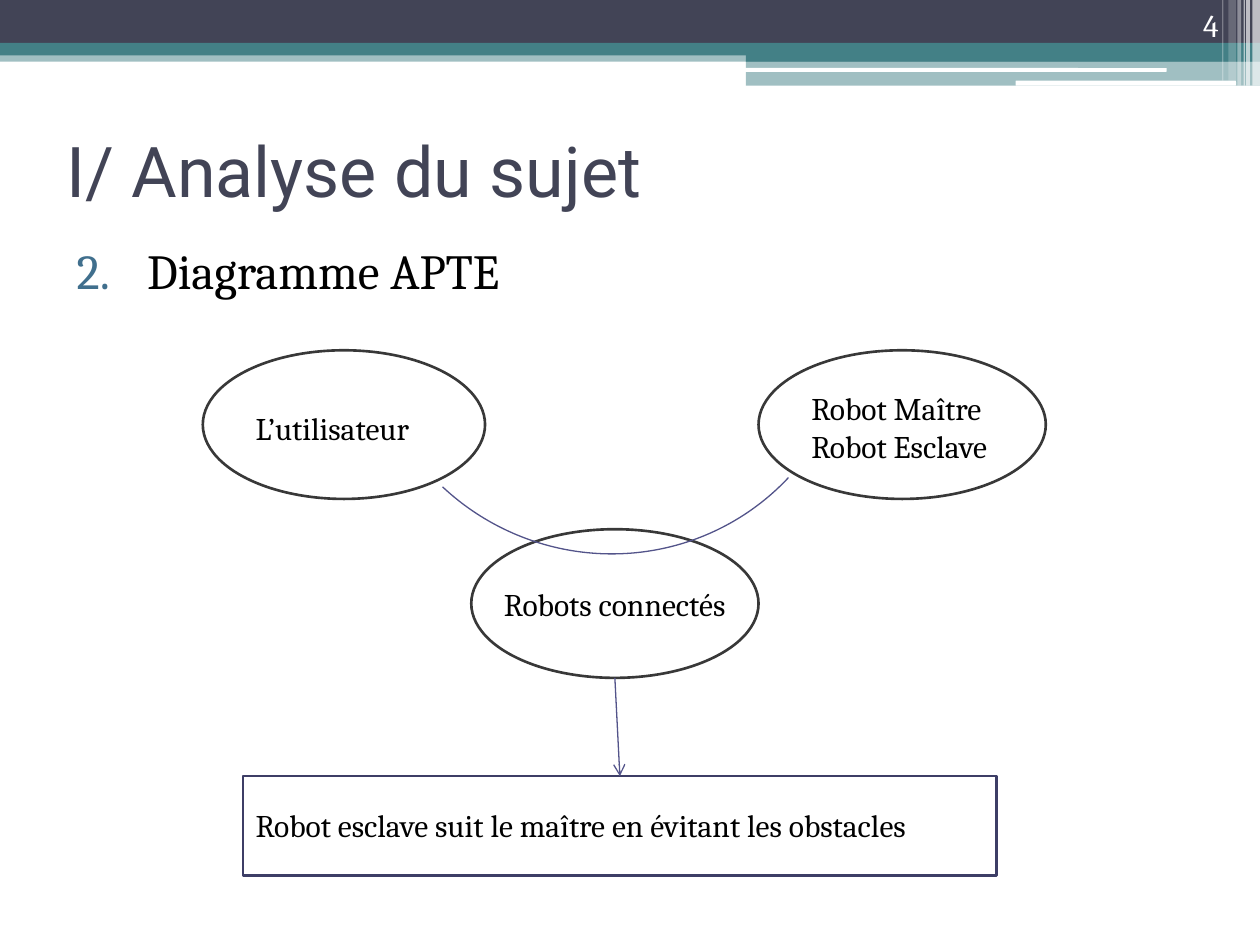
import pptx
import pptx.util
import pptx.dml.color
import pptx.enum.shapes
import pptx.enum.text
import pptx.oxml
import pptx.oxml.ns

Inches = pptx.util.Inches
Pt = pptx.util.Pt
RGBColor = pptx.dml.color.RGBColor
Kind = pptx.enum.shapes.MSO_SHAPE
Anchor = pptx.enum.text.MSO_ANCHOR
Align = pptx.enum.text.PP_ALIGN

WHITE = RGBColor(0xFF, 0xFF, 0xFF)
BLACK = RGBColor(0, 0, 0)
NAVY = RGBColor(0x42, 0x44, 0x56)
TEAL = RGBColor(0x43, 0x80, 0x86)
GREY = RGBColor(0x38, 0x38, 0x38)
FRAME = RGBColor(0x3D, 0x3E, 0x66)
VIOLET = RGBColor(0x53, 0x54, 0x8A)


def add_xml(parent, tag, **attrs):
    """Append a drawing element to parent and return it."""
    node = pptx.oxml.parse_xml(f"<a:{tag} {pptx.oxml.ns.nsdecls('a')}/>")
    for key, value in attrs.items():
        node.set(key, str(value))
    parent.append(node)
    return node


def add_shape(slide, kind, box, fill=None, alpha=100, line=None, width=1.5):
    """Add a flat preset shape."""
    shape = slide.shapes.add_shape(kind, *map(Inches, box))
    shape.shadow.inherit = False
    if fill is None:
        shape.fill.background()
    else:
        shape.fill.solid()
        shape.fill.fore_color.rgb = fill
        if alpha < 100:
            color = shape.fill._xPr.find(".//" + pptx.oxml.ns.qn("a:srgbClr"))
            add_xml(color, "alpha", val=alpha * 1000)
    if line is None:
        shape.line.fill.background()
    else:
        shape.line.color.rgb = line
        shape.line.width = Pt(width)
    return shape


def add_text(slide, box, lines, size=18, color=BLACK, font="Cambria",
             anchor=Anchor.TOP, align=Align.LEFT, wrap=True):
    """Add a text box with one paragraph per line."""
    frame = slide.shapes.add_textbox(*map(Inches, box)).text_frame
    frame.word_wrap = wrap
    frame.vertical_anchor = anchor
    frame.text = "\n".join(lines)
    for para in frame.paragraphs:
        para.alignment = align
        para.font.size = Pt(size)
        para.font.name = font
        para.font.color.rgb = color
    return frame


def add_header(slide, left, top, width):
    """Draw the bands, the stripes and the page number."""
    right = left + width
    step = left + 5.92
    bands = [
        (left, 0.4, width, 0.09, TEAL, 50),
        (left, 0, width, 0.34, NAVY, 100),
        (left, 0.34, width, 0.1, TEAL, 100),
        (step, 0.39, right - step, 0.1, TEAL, 100),
        (step, 0.48, right - step, 0.2, TEAL, 50),
    ]
    for x, y, wide, high, fill, alpha in bands:
        add_shape(slide, Kind.RECTANGLE, (x, top + y, wide, high), fill, alpha)
    for x, y, wide, high in [(5.91, 0.54, 3.35, 0.03), (8.06, 0.64, 1.75, 0.04)]:
        add_shape(slide, Kind.ROUNDED_RECTANGLE, (left + x, top + y, wide, high), WHITE)
    stripes = [
        (0.06, 0.06, 0.68, 65), (0.11, 0.03, 0.68, 65), (0.13, 0.01, 0.68, 60),
        (0.18, 0.03, 0.68, 40), (0.25, 0.06, 0.64, 20), (0.3, 0.01, 0.64, 30),
    ]
    for back, wide, high, alpha in stripes:
        add_shape(slide, Kind.RECTANGLE, (right - back, top, wide, high), WHITE, alpha)
    add_text(slide, (right - 1.06, top, 0.83, 0.4), ["4"], color=WHITE,
             anchor=Anchor.BOTTOM, align=Align.RIGHT)


def add_heading(slide, left, top):
    """Write the title and the numbered subtitle."""
    add_text(slide, (left, top, 9, 1.17), ["I/ Analyse du sujet"], 40, NAVY,
             "Roboto", Anchor.MIDDLE)
    frame = add_text(slide, (left + 0.08, top + 1.1, 3.91, 0.57),
                     ["Diagramme APTE"], 28, wrap=False)
    props = frame.paragraphs[0]._p.get_or_add_pPr()
    props.set("marL", str(Inches(0.56)))
    props.set("indent", str(Inches(-0.56)))
    number = add_xml(props, "buAutoNum", type="arabicPeriod", startAt=2)
    tint = add_xml(props, "buClr")
    add_xml(tint, "srgbClr", val="406F8D")
    number.addprevious(tint)
    runs = props.find(pptx.oxml.ns.qn("a:defRPr"))
    if runs is not None:
        props.append(runs)


def add_diagram(slide, left, top):
    """Draw the actors, the product, its function and their links."""
    def place(x, y, wide, high):
        return left + x, top + y, wide, high

    for x, y, wide in [(0, 0, 2.24), (4.41, 0, 2.28), (2.13, 1.42, 2.28)]:
        add_shape(slide, Kind.OVAL, place(x, y, wide, 1.18), line=GREY)
    add_shape(slide, Kind.RECTANGLE, place(0.32, 3.38, 5.98, 0.79), line=FRAME)
    labels = [
        (0.32, 0.42, 1.89, 0.4, ["L’utilisateur"]),
        (4.73, 0.26, 1.89, 0.71, ["Robot Maître", "Robot Esclave"]),
        (2.29, 1.81, 2.52, 0.4, ["Robots connectés"]),
        (0.32, 3.57, 6.06, 0.4, ["Robot esclave suit le maître en évitant les obstacles"]),
    ]
    for x, y, wide, high, lines in labels:
        add_text(slide, place(x, y, wide, high), lines)
    arc = add_shape(slide, Kind.ARC, place(1.29, -2.28, 3.86, 3.91),
                    line=VIOLET, width=0.75)
    arc.rotation = 133.1
    ends = left + 3.27, top + 2.6, left + 3.31, top + 3.38
    arrow = slide.shapes.add_connector(
        pptx.enum.shapes.MSO_CONNECTOR.STRAIGHT, *map(Inches, ends))
    arrow.line.color.rgb = VIOLET
    arrow.line.width = Pt(0.75)
    add_xml(arrow.line._get_or_add_ln(), "tailEnd", type="arrow")
    add_xml(arrow._element.spPr, "effectLst")


def main():
    """Build and save the slide."""
    deck = pptx.Presentation()
    deck.slide_width = Inches(10)
    deck.slide_height = Inches(7.5)
    slide = deck.slides.add_slide(deck.slide_layouts[6])
    add_header(slide, 0, 0, 10)
    add_heading(slide, 0.43, 0.76)
    add_diagram(slide, 1.61, 2.78)
    deck.save("out.pptx")


if __name__ == "__main__":
    main()
